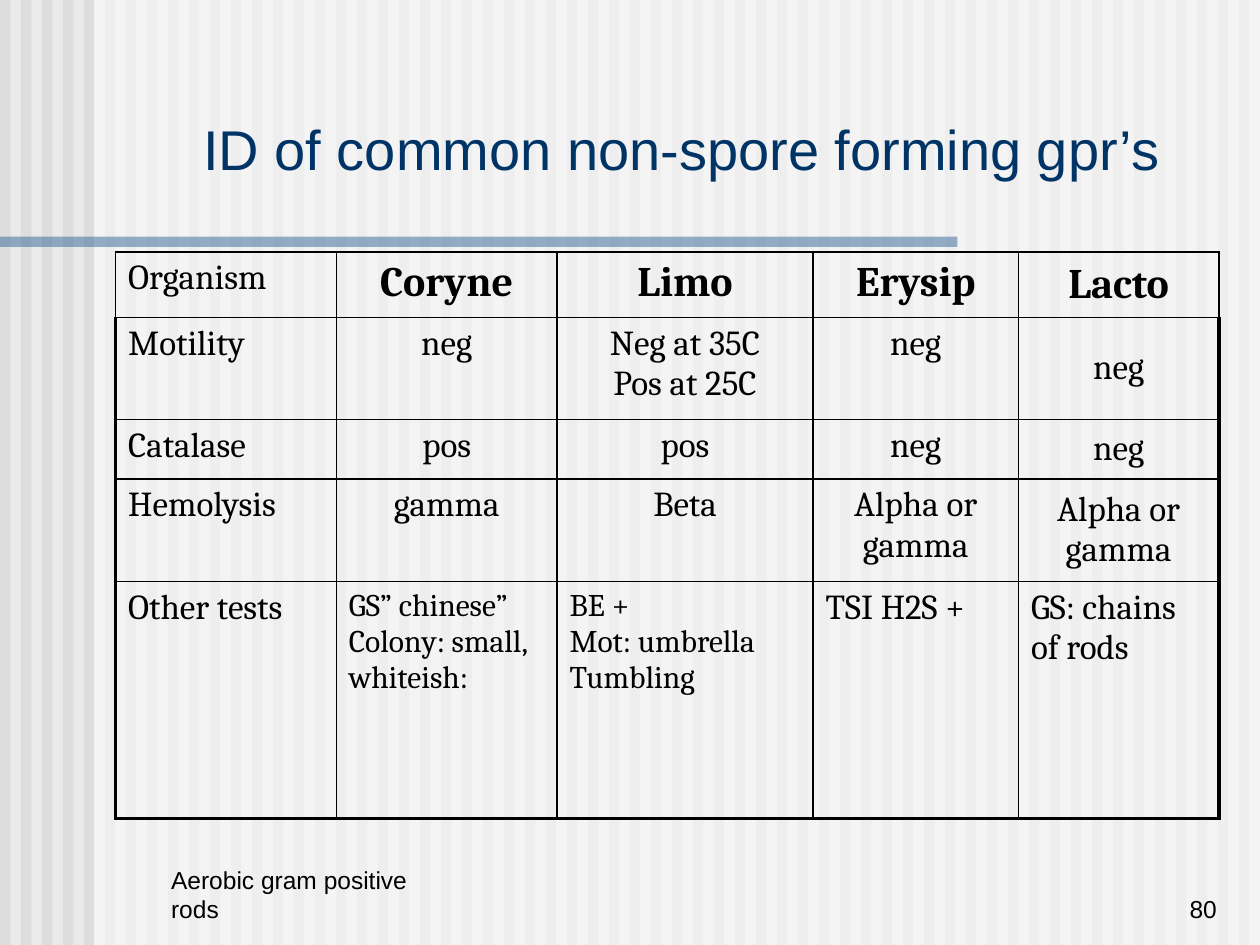
"""Build a slide with a table for identifying non-spore forming gram positive rods."""
from lxml import etree
from pptx import Presentation
from pptx.dml.color import RGBColor
from pptx.enum.shapes import MSO_SHAPE
from pptx.enum.text import MSO_ANCHOR, PP_ALIGN
from pptx.oxml import parse_xml
from pptx.oxml.ns import nsdecls, qn
from pptx.util import Cm, Pt

RECTANGLE = MSO_SHAPE.RECTANGLE
TOP, MIDDLE, BOTTOM = MSO_ANCHOR.TOP, MSO_ANCHOR.MIDDLE, MSO_ANCHOR.BOTTOM
LEFT, CENTER, RIGHT = PP_ALIGN.LEFT, PP_ALIGN.CENTER, PP_ALIGN.RIGHT
color = RGBColor.from_string


def format_text(text_frame, font_name, size, hex_color, alignment, bold=False):
    for paragraph in text_frame.paragraphs:
        paragraph.alignment = alignment
        for run in paragraph.runs:
            run.font.name = font_name
            run.font.size = Pt(size)
            run.font.bold = bold
            run.font.color.rgb = color(hex_color)


def add_bar(left, top, width, height, hex_color, opacity=100):
    bar = slide.shapes.add_shape(RECTANGLE, Cm(left), Cm(top), Cm(width), Cm(height))
    bar.shadow.inherit = False
    bar.line.fill.background()
    bar.fill.solid()
    bar.fill.fore_color.rgb = color(hex_color)
    if opacity < 100:
        fill_color = bar.fill._xPr.find(".//" + qn("a:srgbClr"))
        etree.SubElement(fill_color, qn("a:alpha")).set("val", str(opacity * 1000))


presentation = Presentation()
presentation.slide_width = Cm(25.4)
presentation.slide_height = Cm(19.05)
slide = presentation.slides.add_slide(presentation.slide_layouts[6])
slide.background.fill.solid()
slide.background.fill.fore_color.rgb = color("EAEAEA")

stripe_count = 60
stripe_pitch = 25.4 / stripe_count
for index in range(stripe_count):
    add_bar(index * stripe_pitch, 0, stripe_pitch / 2, 19.05, "DDDDDD")
add_bar(1.9, 0, 23.5, 19.05, "FFFFFF", 50)
add_bar(0, 4.77, 19.3, 0.21, "336699", 50)

text_boxes = [
    ("Aerobic gram positive rods", 3.2, 17.48, 5.28, 1.27, BOTTOM, LEFT, 14, "000000"),
    ("80", 19.5, 17.48, 5.28, 1.27, BOTTOM, RIGHT, 14, "000000"),
    ("ID of common non-spore forming gpr’s", 2.41, 1.47, 22.68, 3.02, MIDDLE, CENTER, 32, "003366"),
]
for text, left, top, width, height, anchor, alignment, size, hex_color in text_boxes:
    text_box = slide.shapes.add_textbox(Cm(left), Cm(top), Cm(width), Cm(height))
    text_frame = text_box.text_frame
    text_frame.word_wrap = True
    text_frame.vertical_anchor = anchor
    text_frame.text = text
    format_text(text_frame, "Arial", size, hex_color, alignment)

rows = [
    ["Organism", "Coryne", "Limo", "Erysip", "Lacto"],
    ["Motility", "neg", "Neg at 35C\nPos at 25C", "neg", "neg"],
    ["Catalase", "pos", "pos", "neg", "neg"],
    ["Hemolysis", "gamma", "Beta", "Alpha or\ngamma", "Alpha or\ngamma"],
    ["Other tests", "GS” chinese”\nColony: small, whiteish:", "BE +\nMot: umbrella\nTumbling",
     "TSI H2S +", "GS: chains of rods"],
]
column_widths = [4.45, 4.45, 5.16, 4.14, 4.04]
row_heights = [1.32, 2.06, 1.2, 2.06, 4.78]
last_row, last_column = len(rows) - 1, len(column_widths) - 1

table = slide.shapes.add_table(
    len(rows), len(column_widths), Cm(2.33), Cm(5.08), Cm(sum(column_widths)), Cm(sum(row_heights))
).table
table.first_row = False
table.horz_banding = False
for column, width in zip(table.columns, column_widths):
    column.width = Cm(width)
for row, height in zip(table.rows, row_heights):
    row.height = Cm(height)

for row_index, row_texts in enumerate(rows):
    for column_index, text in enumerate(row_texts):
        is_header = row_index == 0 and column_index > 0
        is_small = row_index == last_row and column_index in (1, 2)
        is_left = column_index == 0 or row_index == last_row
        size = 24 if is_header else 18 if is_small else 20

        cell = table.cell(row_index, column_index)
        cell.fill.background()
        cell.text_frame.text = text
        cell.vertical_anchor = MIDDLE if column_index == last_column and not is_left else TOP
        format_text(cell.text_frame, "Cambria", size, "000000", LEFT if is_left else CENTER, is_header)

        thick_sides = {
            "L": row_index > 0 and column_index == 0,
            "R": row_index > 0 and column_index == last_column,
            "T": False,
            "B": row_index == last_row,
        }
        for position, (side, is_thick) in enumerate(thick_sides.items()):
            border = parse_xml(
                f'<a:ln{side} {nsdecls("a")} w="{Pt(2.25 if is_thick else 1)}">'
                f'<a:solidFill><a:srgbClr val="000000"/></a:solidFill></a:ln{side}>'
            )
            cell._tc.get_or_add_tcPr().insert(position, border)

presentation.save("out.pptx")
